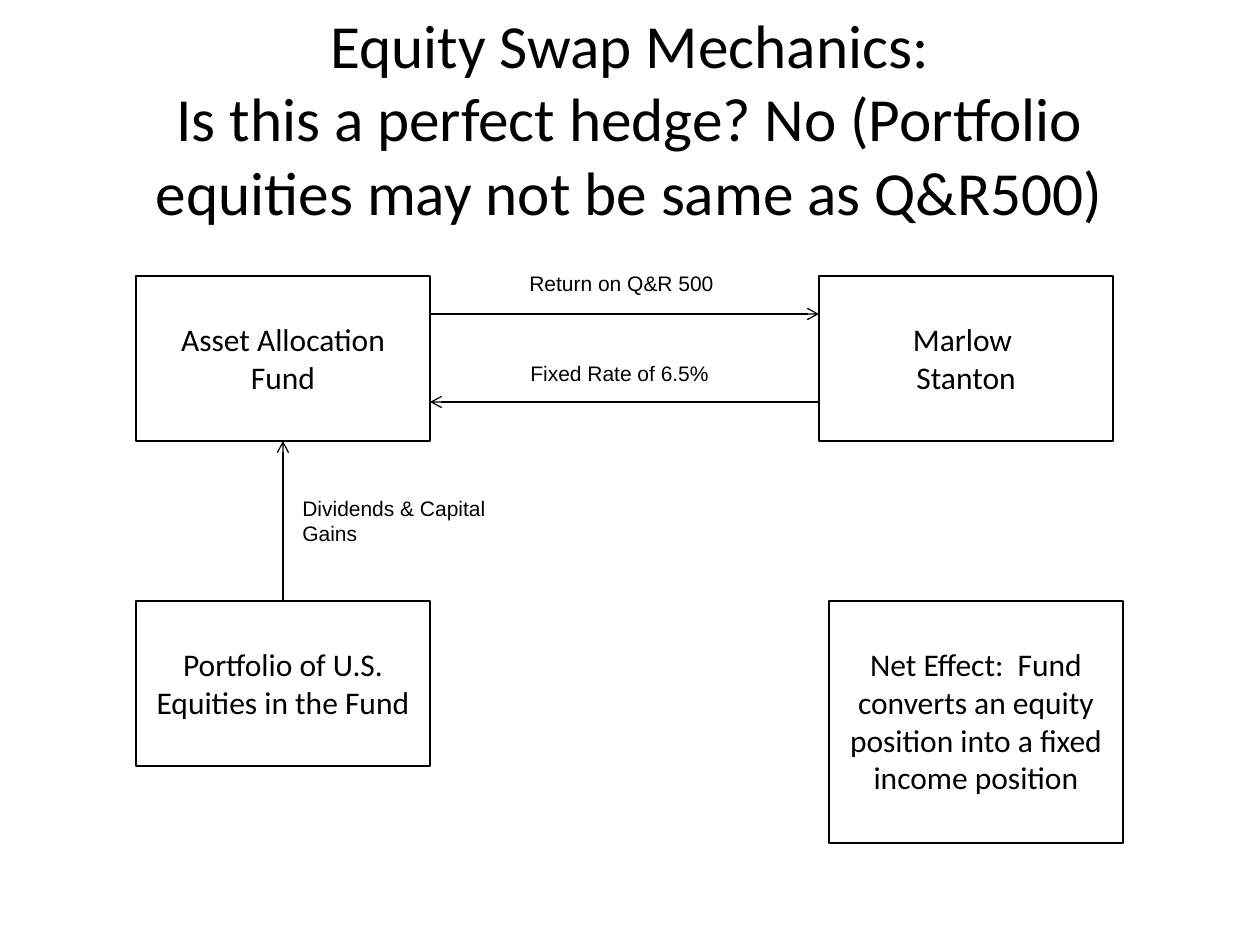
from pptx import Presentation, util as u
from pptx.dml.color import RGBColor
from pptx.enum import shapes as s, text as t
from pptx.oxml.ns import qn
from lxml import etree

PX = 914400 // 126
INK = {"text": "000000", "line": "000000"}
TITLE = {"name": "Calibri", "size": u.Pt(35)}
BODY = {"name": "Calibri", "size": u.Pt(18)}
NOTE = {"name": "Arial", "size": u.Pt(12)}
MID, LEFT = t.PP_ALIGN.CENTER, t.PP_ALIGN.LEFT


def px(*vals):
    return [v * PX for v in vals]


def ink(name):
    return RGBColor.from_string(INK[name])


def write(frame, lines, font, align):
    frame.word_wrap = True
    for i, line in enumerate(lines):
        para = frame.paragraphs[0] if i == 0 else frame.add_paragraph()
        para.alignment = align
        para.text = line
        for key, val in font.items():
            setattr(para.font, key, val)
        para.font.color.rgb = ink("text")


def label(slide, box, lines, font=NOTE, align=LEFT):
    frame = slide.shapes.add_textbox(*px(*box)).text_frame
    write(frame, lines, font, align)
    return frame


def party(slide, box, *lines):
    rect = slide.shapes.add_shape(s.MSO_SHAPE.RECTANGLE, *px(*box))
    rect.shadow.inherit = False
    rect.fill.background()
    rect.line.color.rgb = ink("line")
    rect.line.width = u.Pt(0.75)
    frame = rect.text_frame
    frame.vertical_anchor = t.MSO_ANCHOR.TOP
    frame.margin_top = 44 * PX  # text starts one line down
    write(frame, lines, BODY, MID)
    return rect


def arrow(slide, x1, y1, x2, y2):
    line = slide.shapes.add_connector(
        s.MSO_CONNECTOR.STRAIGHT, *px(x1, y1, x2, y2))
    line.line.color.rgb = ink("line")
    line.line.width = u.Pt(0.75)
    etree.SubElement(line.line._get_or_add_ln(), qn("a:tailEnd"), type="arrow")
    etree.SubElement(line._element.spPr, qn("a:effectLst"))
    return line


def title(slide, box):
    frame = label(slide, box, [
        "Equity Swap Mechanics:\vIs this a perfect hedge? "
        "No (Portfolio equities may not be same as Q&R500)"], TITLE, MID)
    frame.vertical_anchor = t.MSO_ANCHOR.MIDDLE


def swap(slide, x, y):
    wide, high, drop = 294, 165, 325
    far = x + 683  # left side of the dealer
    # Parties
    fund = party(slide, (x, y, wide, high), "Asset Allocation Fund")
    party(slide, (far, y, wide, high), "Marlow ", "Stanton")
    stock = party(slide, (x, y + drop, wide, high),
                  "Portfolio of U.S. Equities in the Fund")
    party(slide, (far + 10, y + drop, wide, 242),
          "Net Effect:  Fund converts an equity position "
          "into a fixed income position")
    # Flows
    arrow(slide, x + wide, y + 38, far, y + 38)
    arrow(slide, far, y + 126, x + wide, y + 126)
    rise = arrow(slide, x + wide // 2, y + drop, x + wide // 2, y + high)
    rise.begin_connect(stock, 0)
    rise.end_connect(fund, 2)
    # Flow labels
    for dx, dy, high, words in (
            (154, 213, 64, "Dividends & Capital Gains"),
            (381, -12, 38, "Return on Q&R 500"),
            (382, 78, 38, "Fixed Rate of 6.5%")):
        label(slide, (x + dx, y + dy, 215, high), [words])


def main():
    deck = Presentation()
    deck.slide_width, deck.slide_height = px(1260, 945)
    slide = deck.slides.add_slide(deck.slide_layouts[6])
    title(slide, (63, 38, 1134, 158))
    swap(slide, 136, 276)
    deck.save("out.pptx")


if __name__ == "__main__":
    main()
